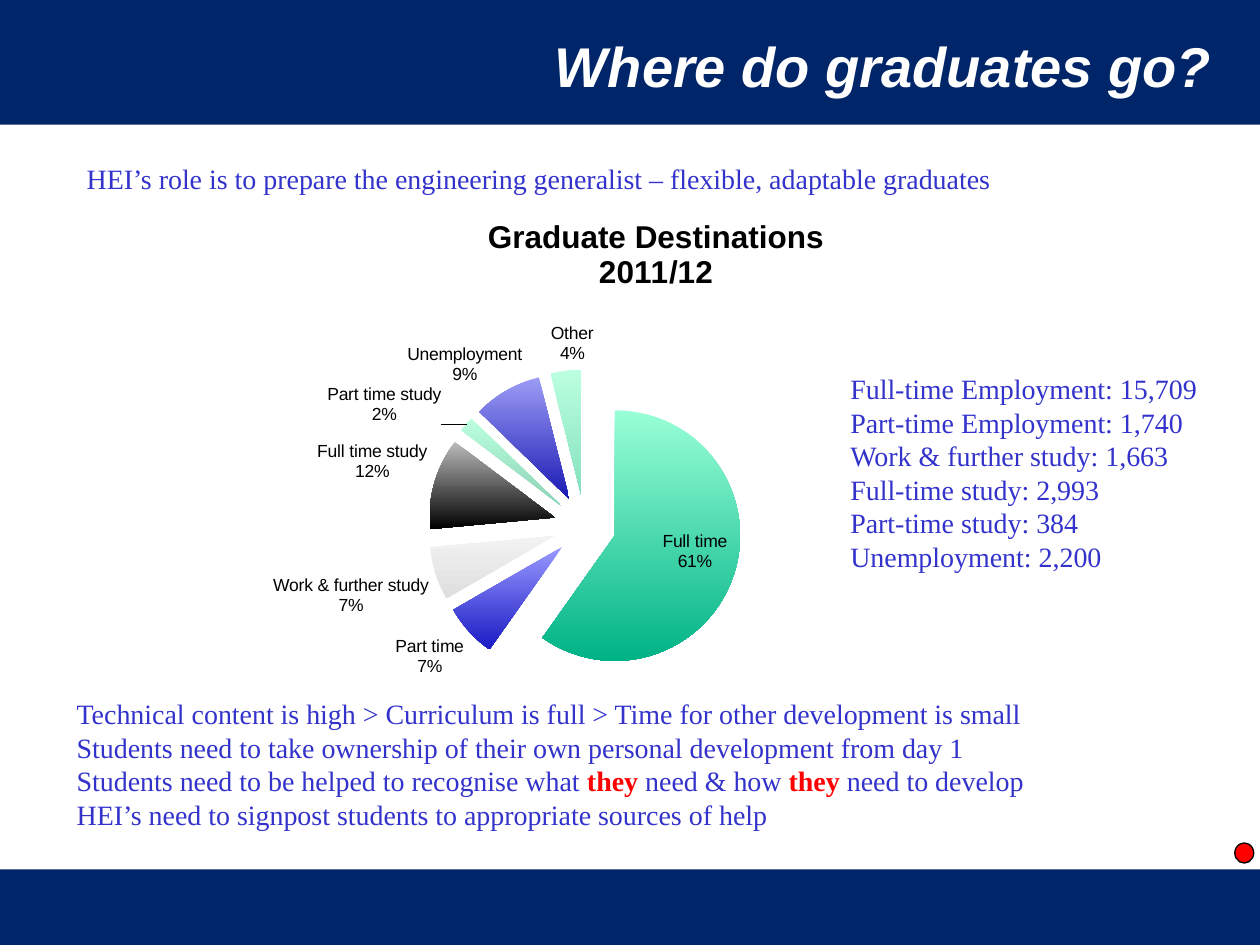
"""Build the slide on graduate destinations with its exploded pie chart."""
from dataclasses import dataclass

import pptx
import pptx.chart.data
import pptx.dml.color
import pptx.enum.chart
import pptx.enum.shapes
import pptx.enum.text
import pptx.oxml
import pptx.oxml.ns
import pptx.util
from pptx.util import Inches

COLOURS = {
    "navy": "002569", "white": "FFFFFF", "black": "000000",
    "blue": "3333CC", "red": "FF0000",
}
CHART_NS = 'xmlns:c="http://schemas.openxmlformats.org/drawingml/2006/chart"'
SHARE_FORMAT = '0"%"'
ALIGN = pptx.enum.text.PP_ALIGN
SHAPES = pptx.enum.shapes.MSO_SHAPE
BODY = {"name": "Times New Roman", "size": pptx.util.Pt(16), "bold": False}
HEADING = {"name": "Arial", "size": pptx.util.Pt(32), "bold": True, "italic": True}
CHART_TITLE = {"name": "Arial", "size": pptx.util.Pt(18), "bold": True}
CHART_TEXT = {"name": "Arial", "size": pptx.util.Pt(10), "bold": False}


@dataclass
class Box:
    """A rectangle in inches."""
    left: float
    top: float
    width: float
    height: float

    def lengths(self) -> tuple:
        """Return the rectangle as slide lengths."""
        return tuple(map(Inches, (self.left, self.top, self.width, self.height)))


@dataclass
class Destination:
    """One slice: share, gradient ends, label position and label shift."""
    name: str
    share: int
    upper: str
    lower: str
    position: str = "outEnd"
    shift: tuple = (0, 0)


DESTINATIONS = [
    Destination("Full time", 61, "99FFD6", "00B386", "inEnd"),
    Destination("Part time", 7, "9999FF", "1A1AC4"),
    Destination("Work & further study", 7, "F2F2F2", "DFDFDF"),
    Destination("Full time study", 12, "BBBBBB", "000000"),
    Destination("Part time study", 2, "BBFFE0", "8CD2B4", shift=(-0.02, 0.01)),
    Destination("Unemployment", 9, "9C9CF5", "1A1AB4", shift=(0.02, 0)),
    Destination("Other", 4, "BBFFE0", "84E0BE", shift=(0.03, 0)),
]
FIGURES = [
    "Full-time Employment: 15,709", "Part-time Employment: 1,740",
    "Work & further study: 1,663", "Full-time study: 2,993",
    "Part-time study: 384", "Unemployment: 2,200",
]
ADVICE = [
    "Technical content is high > Curriculum is full > Time for other development is small",
    "Students need to take ownership of their own personal development from day 1",
    "Students need to be helped to recognise what *they *need & how *they *need to develop",
    "HEI’s need to signpost students to appropriate sources of help",
]
ROLE = ["HEI’s role is to prepare the engineering generalist – flexible, adaptable graduates"]


def colour(name: str) -> pptx.dml.color.RGBColor:
    """Look up a named colour, or take a hex string as it is."""
    return pptx.dml.color.RGBColor.from_string(COLOURS.get(name, name))


def style(font, values: dict, fill: str) -> None:
    """Apply format values and a colour to a font."""
    for name, value in values.items():
        setattr(font, name, value)
    font.color.rgb = colour(fill)


def add_shape(page, kind, box: Box, fill: str, line: str | None = None) -> None:
    """Draw a filled shape with an optional thin outline."""
    shape = page.shapes.add_shape(kind, *box.lengths())
    shape.shadow.inherit = False
    shape.fill.solid()
    shape.fill.fore_color.rgb = colour(fill)
    if line:
        shape.line.color.rgb = colour(line)
        shape.line.width = pptx.util.Pt(0.75)
    else:
        shape.line.fill.background()


def add_text(page, box: Box, lines: list[str], values: dict, fill: str,
             align=ALIGN.LEFT, anchor=pptx.enum.text.MSO_ANCHOR.TOP) -> None:
    """Write lines, with text between asterisks in bold red."""
    frame = page.shapes.add_textbox(*box.lengths()).text_frame
    frame.word_wrap = align == ALIGN.RIGHT
    frame.vertical_anchor = anchor
    for number, line in enumerate(lines):
        para = frame.paragraphs[0] if number == 0 else frame.add_paragraph()
        para.alignment = align
        for part, text in enumerate(line.split("*")):
            span = para.add_run()
            span.text = text
            if part % 2:
                style(span.font, {**values, "bold": True}, "red")
            else:
                style(span.font, values, fill)


def set_layout(parent, index: int, inner: bool = False, **sizes: float) -> None:
    """Give a chart part a manual layout in fractions of the chart."""
    for old in parent.findall(pptx.oxml.ns.qn("c:layout")):
        parent.remove(old)
    target = '<c:layoutTarget val="inner"/>' if inner else ""
    modes = '<c:xMode val="edge"/><c:yMode val="edge"/>'
    values = "".join(f'<c:{key} val="{value}"/>' for key, value in sizes.items())
    parent.insert(index, pptx.oxml.parse_xml(
        f"<c:layout {CHART_NS}><c:manualLayout>{target}{modes}{values}"
        "</c:manualLayout></c:layout>"))


def label_xml(index: int, item: Destination) -> str:
    """Describe the label of one slice."""
    x, y = item.shift
    layout = (f'<c:layout><c:manualLayout><c:x val="{x}"/><c:y val="{y}"/>'
              "</c:manualLayout></c:layout>") if any(item.shift) else ""
    return (f'<c:dLbl {CHART_NS}><c:idx val="{index}"/>{layout}'
            f"<c:numFmt formatCode='{SHARE_FORMAT}' sourceLinked='0'/>"
            f'<c:dLblPos val="{item.position}"/><c:showLegendKey val="0"/>'
            '<c:showVal val="1"/><c:showCatName val="1"/><c:showSerName val="0"/>'
            '<c:showPercent val="0"/><c:showBubbleSize val="0"/>'
            "<c:separator>\n</c:separator></c:dLbl>")


def add_pie(page, box: Box) -> None:
    """Draw the exploded pie of graduate destinations."""
    data = pptx.chart.data.CategoryChartData()
    data.categories = [item.name for item in DESTINATIONS]
    data.add_series("Series 1", [item.share for item in DESTINATIONS])
    chart = page.shapes.add_chart(
        pptx.enum.chart.XL_CHART_TYPE.PIE, *box.lengths(), data).chart
    chart.has_legend = False
    style(chart.font, CHART_TEXT, "black")
    chart.has_title = True
    frame = chart.chart_title.text_frame
    for para, text in zip((frame.paragraphs[0], frame.add_paragraph()),
                          ("Graduate Destinations", "2011/12")):
        span = para.add_run()
        span.text = text
        style(span.font, CHART_TITLE, "black")
    set_layout(chart.chart_title._element, 1, x=0.48, y=0.02)
    plot = chart.plots[0]
    plot.vary_by_categories = True
    set_layout(plot._element.getparent(), 0, True, x=0.42, y=0.33, w=0.33, h=0.62)
    series = plot.series[0]
    labels = series.data_labels
    style(labels.font, CHART_TEXT, "black")
    labels.show_category_name = labels.show_value = True
    labels.show_percentage = False
    labels.number_format, labels.number_format_is_linked = SHARE_FORMAT, False
    for index, item in enumerate(DESTINATIONS):
        fill = series.points[index].format.fill
        fill.gradient()
        fill.gradient_angle = 270
        for stop, shade in zip(fill.gradient_stops, (item.upper, item.lower)):
            stop.color.rgb = colour(shade)
        labels._element.insert(index, pptx.oxml.parse_xml(label_xml(index, item)))
    series._element.find(pptx.oxml.ns.qn("c:tx")).addnext(
        pptx.oxml.parse_xml(f'<c:explosion {CHART_NS} val="25"/>'))


def main() -> None:
    """Build and save the deck."""
    deck = pptx.Presentation()
    deck.slide_width, deck.slide_height = Inches(10), Inches(7.5)
    page = deck.slides.add_slide(deck.slide_layouts[6])
    for band in (Box(0, 6.9, 10, 0.6), Box(0, 0, 10, 0.99)):
        add_shape(page, SHAPES.RECTANGLE, band, "navy")
    add_text(page, Box(2.95, -0.07, 6.77, 1.17), ["Where do graduates go?"], HEADING,
             "white", ALIGN.RIGHT, pptx.enum.text.MSO_ANCHOR.MIDDLE)
    add_pie(page, Box(0.18, 1.61, 7.63, 4.01))
    add_text(page, Box(6.65, 2.9, 2.99, 1.72), FIGURES, BODY, "blue")
    add_text(page, Box(0.51, 5.48, 7.81, 1.45), ADVICE, BODY, "blue")
    add_text(page, Box(0.59, 1.23, 7.47, 0.64), ROLE, BODY, "blue")
    add_shape(page, SHAPES.OVAL, Box(9.8, 6.69, 0.15, 0.16), "red", "black")
    deck.save("out.pptx")


if __name__ == "__main__":
    main()
